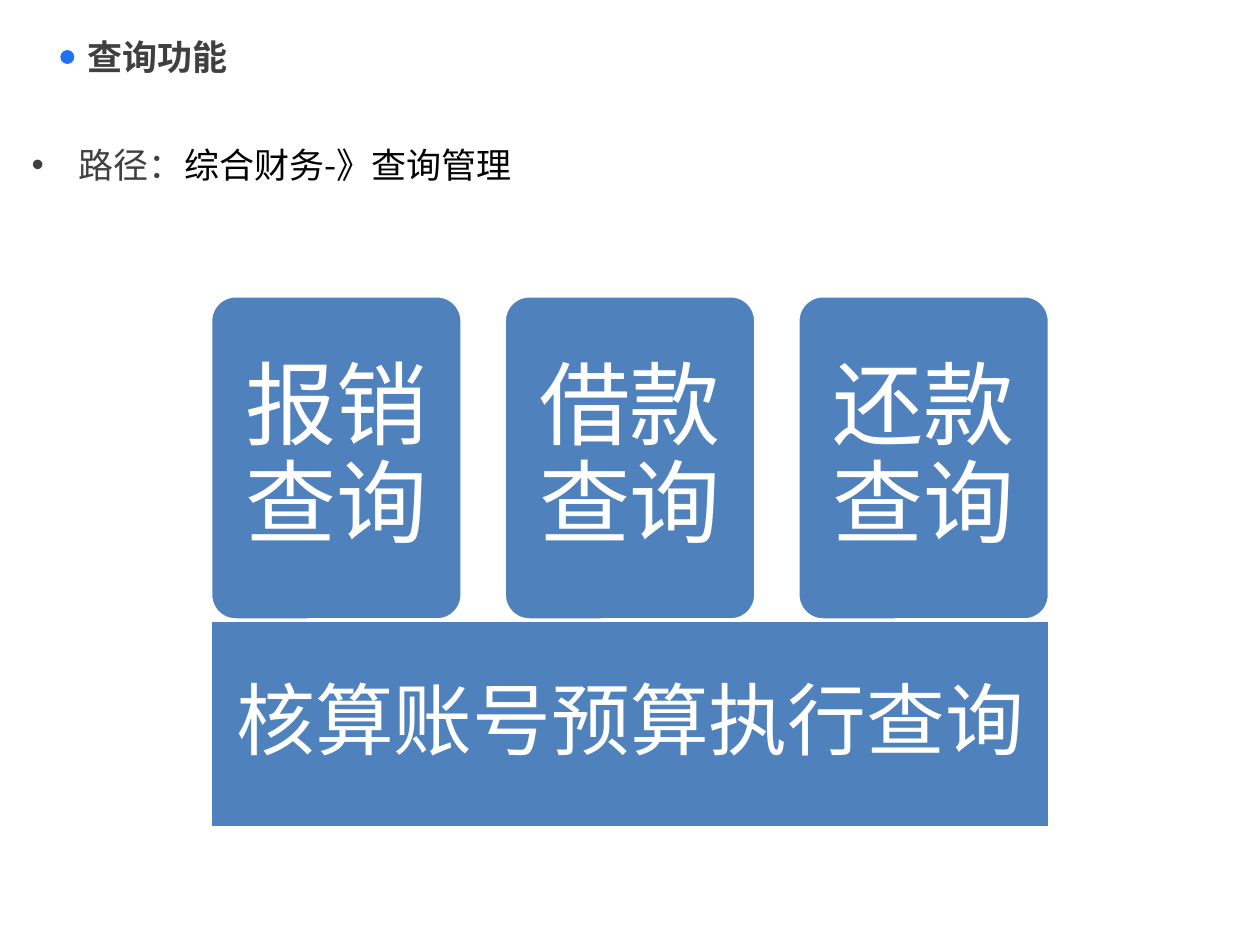
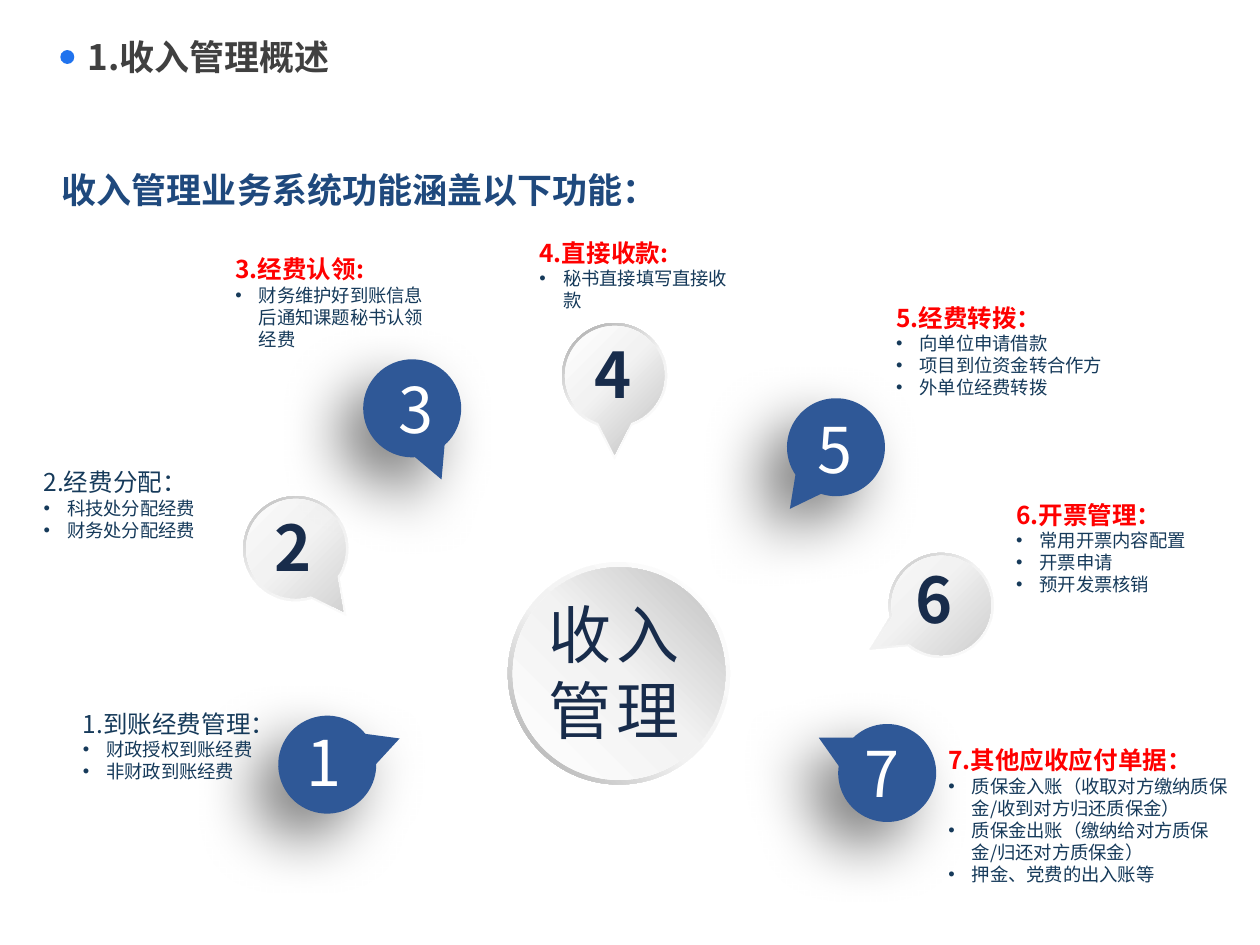
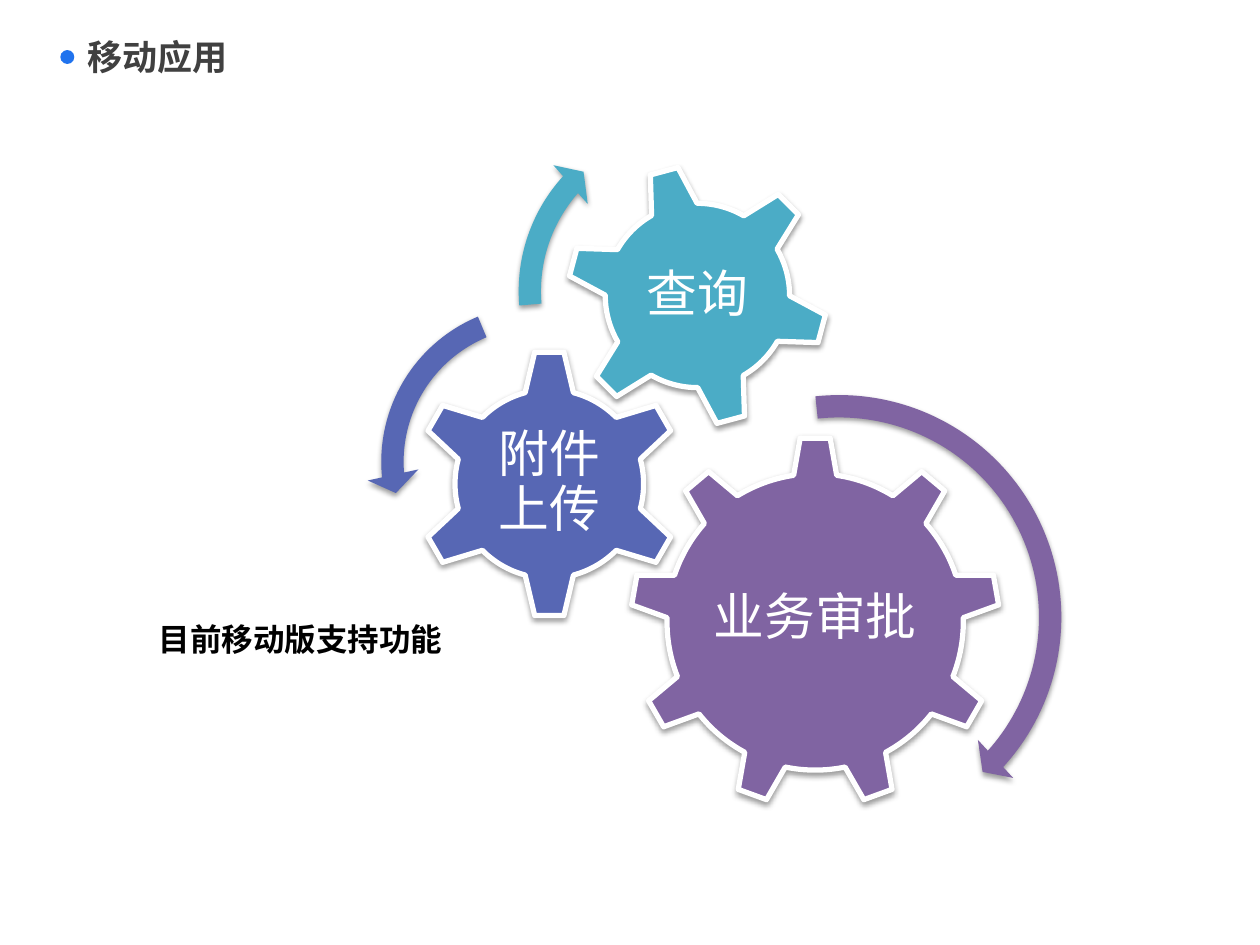
from copy import deepcopy
from math import cos, radians, sin, tan

from lxml.etree import Element, SubElement
from pptx import Presentation
from pptx.dml.color import RGBColor
from pptx.enum.lang import MSO_LANGUAGE_ID as LANGUAGE
from pptx.enum.shapes import MSO_SHAPE as SHAPE
from pptx.enum.text import MSO_ANCHOR as ANCHOR, PP_ALIGN as ALIGN
from pptx.oxml.ns import qn
from pptx.util import Pt

CJK = "Noto Sans CJK SC"
LATIN = "Calibri"
WHITE = RGBColor(0xFF, 0xFF, 0xFF)
BLACK = RGBColor(0x00, 0x00, 0x00)
PALE = RGBColor(0xF2, 0xF2, 0xF2)
SILVER = RGBColor(0xBF, 0xBF, 0xBF)
GREY = RGBColor(0xA6, 0xA6, 0xA6)
DARK = RGBColor(0x40, 0x40, 0x40)
DOT_BLUE = RGBColor(0x20, 0x73, 0xEE)
CARD_BLUE = RGBColor(0x4F, 0x81, 0xBD)
PIN_BLUE = RGBColor(0x2F, 0x58, 0x97)
HEADING_BLUE = RGBColor(0x1F, 0x49, 0x7D)
NUMBER_NAVY = RGBColor(0x18, 0x2C, 0x4B)
NOTE_NAVY = RGBColor(0x16, 0x3A, 0x5A)
RED = RGBColor(0xFF, 0x00, 0x00)
PURPLE = RGBColor(0x80, 0x64, 0xA2)
INDIGO = RGBColor(0x57, 0x67, 0xB4)
TEAL = RGBColor(0x4B, 0xAC, 0xC6)

RIM = [(0, WHITE), (0.55, PALE), (1, GREY)]
FACE = [(0, WHITE), (0.43, PALE), (1, SILVER)]
HUB_FACE = [(0, WHITE), (0.51, PALE), (1, SILVER)]
PIN_SHADOW = (50, 35, 20, 135)
GEAR_SHADOW = (38, 3.1, 1.6, 90)


def write(target, text, box=None, size=20, color=DARK, bold=False, latin=CJK,
          align=ALIGN.LEFT, anchor=ANCHOR.TOP, wrap=True, inset=None,
          line_spacing=None, indent=0, tracking=0, inline=False):
    frame = target
    if box:
        frame = target.shapes.add_textbox(*map(Pt, box)).text_frame
        frame.word_wrap = wrap
        frame.vertical_anchor = anchor
    if inset is not None:
        frame.margin_left = frame.margin_right = Pt(inset)
        frame.margin_top = frame.margin_bottom = Pt(inset)
    paragraph = frame.paragraphs[-1]
    if paragraph.text and not inline:
        paragraph = frame.add_paragraph()
    paragraph.alignment = align
    if line_spacing:
        paragraph.line_spacing = line_spacing
    if indent:
        properties = paragraph._p.get_or_add_pPr()
        properties.set("marL", str(Pt(indent)))
        properties.set("indent", str(-Pt(indent)))
        SubElement(properties, qn("a:buFont"), typeface="Arial")
        SubElement(properties, qn("a:buChar"), char="•")
    run = paragraph.add_run()
    run.text = text
    run.font.size = Pt(size)
    run.font.bold = bold
    run.font.color.rgb = color
    run.font.name = latin
    run.font.language_id = LANGUAGE.SIMPLIFIED_CHINESE
    run_properties = run._r.get_or_add_rPr()
    SubElement(run_properties, qn("a:ea"), typeface=CJK)
    if tracking:
        run_properties.set("spc", str(tracking * 100))
    return frame


def paint(shape, fill, angle=0, line_width=0, shadow=None):
    properties = shape.element.spPr
    if isinstance(fill, list):
        shape.fill.gradient()
        shape.fill.gradient_angle = 360 - angle
        properties.find(qn("a:gradFill")).set("rotWithShape", "0")
        stop_list = properties.find(".//" + qn("a:gsLst"))
        stop_list.append(deepcopy(stop_list[0]))
        for stop, (position, color) in zip(shape.fill.gradient_stops, fill):
            stop.position = position
            stop.color.rgb = color
    else:
        shape.fill.solid()
        shape.fill.fore_color.rgb = fill
    if line_width:
        shape.line.color.rgb = WHITE
        shape.line.width = Pt(line_width)
    else:
        shape.line.fill.background()
    shape.shadow.inherit = False
    if shadow:
        opacity, blur, distance, direction = shadow
        outer = SubElement(properties.find(qn("a:effectLst")), qn("a:outerShdw"),
                           blurRad=str(Pt(blur)), dist=str(Pt(distance)),
                           dir=str(direction * 60000), algn="ctr", rotWithShape="0")
        shade = SubElement(outer, qn("a:srgbClr"), val=str(BLACK))
        SubElement(shade, qn("a:alpha"), val=str(opacity * 1000))


presentation = Presentation()
presentation.slide_width = Pt(720)
presentation.slide_height = Pt(540)
layout = presentation.slide_layouts[5]

slides = []
for title_text in ["查询功能", "1.收入管理概述", "移动应用"]:
    slide = presentation.slides.add_slide(layout)
    title = slide.shapes.title
    title.left, title.top, title.width, title.height = map(Pt, (42.8, 8.2, 640, 48))
    title.text_frame.vertical_anchor = ANCHOR.MIDDLE
    write(title.text_frame, title_text, bold=True)
    slides.append(slide)
query_slide, income_slide, mobile_slide = slides

title_dot = query_slide.shapes.add_shape(SHAPE.OVAL, Pt(34.5), Pt(28.6), Pt(8), Pt(8))
paint(title_dot, DOT_BLUE)
layout.shapes.element.append(title_dot.element)

route = write(query_slide, "路径：", box=(11, 78.5, 717, 31.5), indent=27)
write(route, "综合财务-》查询管理", color=BLACK, inline=True)

cards = [(SHAPE.ROUNDED_RECTANGLE, 120.3 + 167.8 * column, 169, 143.8, 185.3, text, 52, 15)
         for column, text in enumerate(["报销查询", "借款查询", "还款查询"])]
cards.append((SHAPE.RECTANGLE, 120, 354.5, 480, 118.5, "核算账号预算执行查询", 45, 13.5))
for kind, left, top, width, height, text, size, inset in cards:
    card = query_slide.shapes.add_shape(kind, Pt(left), Pt(top), Pt(width), Pt(height))
    if kind == SHAPE.ROUNDED_RECTANGLE:
        card.adjustments[0] = 0.1
    paint(card, CARD_BLUE, line_width=2)
    card.text_frame.word_wrap = True
    card.text_frame.vertical_anchor = ANCHOR.MIDDLE
    write(card.text_frame, text, size=size, color=WHITE, latin=LATIN,
          align=ALIGN.CENTER, inset=inset, line_spacing=0.9)

write(income_slide, "收入管理业务系统功能涵盖以下功能：", box=(28.2, 58.6, 661, 54),
      color=HEADING_BLUE, bold=True, line_spacing=Pt(58))

hub_rim = income_slide.shapes.add_shape(SHAPE.DONUT, Pt(290.2), Pt(321.3), Pt(127), Pt(127))
hub_rim.adjustments[0] = 0.05
paint(hub_rim, RIM, angle=135)
hub_face = income_slide.shapes.add_shape(SHAPE.OVAL, Pt(293), Pt(324.2), Pt(121.5), Pt(121.5))
paint(hub_face, HUB_FACE, angle=315)
write(income_slide, "收入管理", box=(306.5, 337, 107.3, 94.3), size=36,
      color=NUMBER_NAVY, tracking=3)

BLUE_LAYERS = [(28, 44, PIN_BLUE, 0, PIN_SHADOW)]
SILVER_LAYERS = [(30, 48, RIM, 235, None), (28.4, 45, FACE, 45, None)]
PIN_ARC = [-71, 0, 90, 180, 251]
pins = [
    (187, 437, 340.1, 167.8, 409.7),
    (169, 313.5, 53, 149.8, 287.3),
    (235.5, 233.3, 67.6, 220.5, 208),
    (351.2, 214.6, 90, 332.6, 188),
    (477.7, 255.5, 126.8, 460.2, 231),
    (537.8, 345.9, 148.3, 516.2, 316.8),
    (507, 441.7, 207.3, 487.2, 416),
]
for number, (center_x, center_y, direction, text_left, text_top) in enumerate(pins, 1):
    is_silver = number % 2 == 0
    for radius, reach, fill, angle, shadow in SILVER_LAYERS if is_silver else BLUE_LAYERS:
        overhang = (reach - radius) / 2
        upright_x = center_x + overhang * cos(radians(direction))
        upright_y = center_y + overhang * sin(radians(direction)) + overhang
        start = radians(PIN_ARC[0])
        offsets = [(0, -reach), (radius * cos(start), radius * sin(start))]
        for first, last in zip(PIN_ARC, PIN_ARC[1:]):
            a, b = radians(first), radians(last)
            handle = 4 / 3 * tan((b - a) / 4)
            offsets += [
                (radius * (cos(a) - handle * sin(a)), radius * (sin(a) + handle * cos(a))),
                (radius * (cos(b) + handle * sin(b)), radius * (sin(b) - handle * cos(b))),
                (radius * cos(b), radius * sin(b)),
            ]
        points = [(Pt(upright_x + x), Pt(upright_y + y)) for x, y in offsets]
        builder = income_slide.shapes.build_freeform(*points[0])
        builder.add_line_segments(points[1:], close=True)
        pin = builder.convert_to_shape()
        outline = pin.element.spPr.find(".//" + qn("a:path"))
        segments = outline.findall(qn("a:lnTo"))[1:13]
        for index in range(0, 12, 3):
            curve = Element(qn("a:cubicBezTo"))
            segments[index].addprevious(curve)
            for segment in segments[index:index + 3]:
                curve.append(segment[0])
                outline.remove(segment)
        pin.rotation = (direction + 90) % 360
        paint(pin, fill, angle=angle, shadow=shadow)
    write(income_slide, str(number), box=(text_left, text_top, 36, 51), size=36,
          color=NUMBER_NAVY if is_silver else WHITE, bold=is_silver, wrap=False)

notes = [
    (40.3, 401.5, 123.2, 49.7, False, "1.到账经费管理：", ["财政授权到账经费", "非财政到账经费"]),
    (17.8, 263.5, 123.2, 49.7, False, "2.经费分配：", ["科技处分配经费", "财务处分配经费"]),
    (127.4, 141.8, 123.2, 62.6, True, "3.经费认领:",
     ["财务维护好到账信息后通知课题秘书认领经费"]),
    (301.2, 132.5, 123.2, 49.7, True, "4.直接收款:", ["秘书直接填写直接收款"]),
    (505, 169.4, 139, 62.6, True, "5.经费转拨：",
     ["向单位申请借款", "项目到位资金转合作方", "外单位经费转拨"]),
    (573.6, 282.2, 123.2, 74.9, True, "6.开票管理：",
     ["常用开票内容配置", "开票申请", "预开发票核销"]),
    (534.8, 422.4, 178, 87.8, True, "7.其他应收应付单据：",
     ["质保金入账（收取对方缴纳质保金/收到对方归还质保金）",
      "质保金出账（缴纳给对方质保金/归还对方质保金）",
      "押金、党费的出入账等"]),
]
for left, top, width, height, is_key, heading, items in notes:
    note = write(income_slide, heading, box=(left, top, width, height), size=14,
                 color=RED if is_key else NOTE_NAVY, bold=is_key)
    for item in items:
        write(note, item, size=10.5, color=NOTE_NAVY, indent=13.5)

gears = [
    (SHAPE.GEAR_9, 360, 249.6, 211.7, 0, PURPLE, "业务审批", (402.5, 299.2, 126.7, 108.7)),
    (SHAPE.GEAR_6, 236.9, 199.5, 154, 0, INDIGO, "附件上传", (275.8, 238.3, 76.3, 75.6)),
    (SHAPE.GEAR_6, 323.3, 93.6, 150.5, 345, TEAL, "查询", (356.4, 127, 84.2, 84.2)),
]
for kind, left, top, size, rotation, color, text, label_box in gears:
    gear = mobile_slide.shapes.add_shape(kind, Pt(left), Pt(top), Pt(size), Pt(size))
    gear.rotation = rotation
    paint(gear, color, line_width=3, shadow=GEAR_SHADOW)
    write(mobile_slide, text, box=label_box, size=29, color=WHITE, latin=LATIN,
          align=ALIGN.CENTER, anchor=ANCHOR.MIDDLE, inset=2.9, line_spacing=0.9)

arrows = [
    (SHAPE.CIRCULAR_ARROW, 344.2, 217.4, 270.7, PURPLE, (2.99, 25.31, 158.31)),
    (SHAPE.LEFT_CIRCULAR_ARROW, 209.5, 165.6, 196.6, INDIGO, (4.3, 104.89, 148.38)),
    (SHAPE.CIRCULAR_ARROW, 288, 60.5, 211.7, TEAL, (3.94, 133.14, 105.08)),
]
for kind, left, top, size, color, angles in arrows:
    arrow = mobile_slide.shapes.add_shape(kind, Pt(left), Pt(top), Pt(size), Pt(size))
    for index, value in enumerate((12.75 / size, *angles, 14.8 / size)):
        arrow.adjustments[index] = value
    paint(arrow, color, shadow=GEAR_SHADOW)

write(mobile_slide, "目前移动版支持功能", box=(83.5, 350.6, 181.4, 29), size=18,
      color=BLACK, bold=True)

presentation.save("out.pptx")
